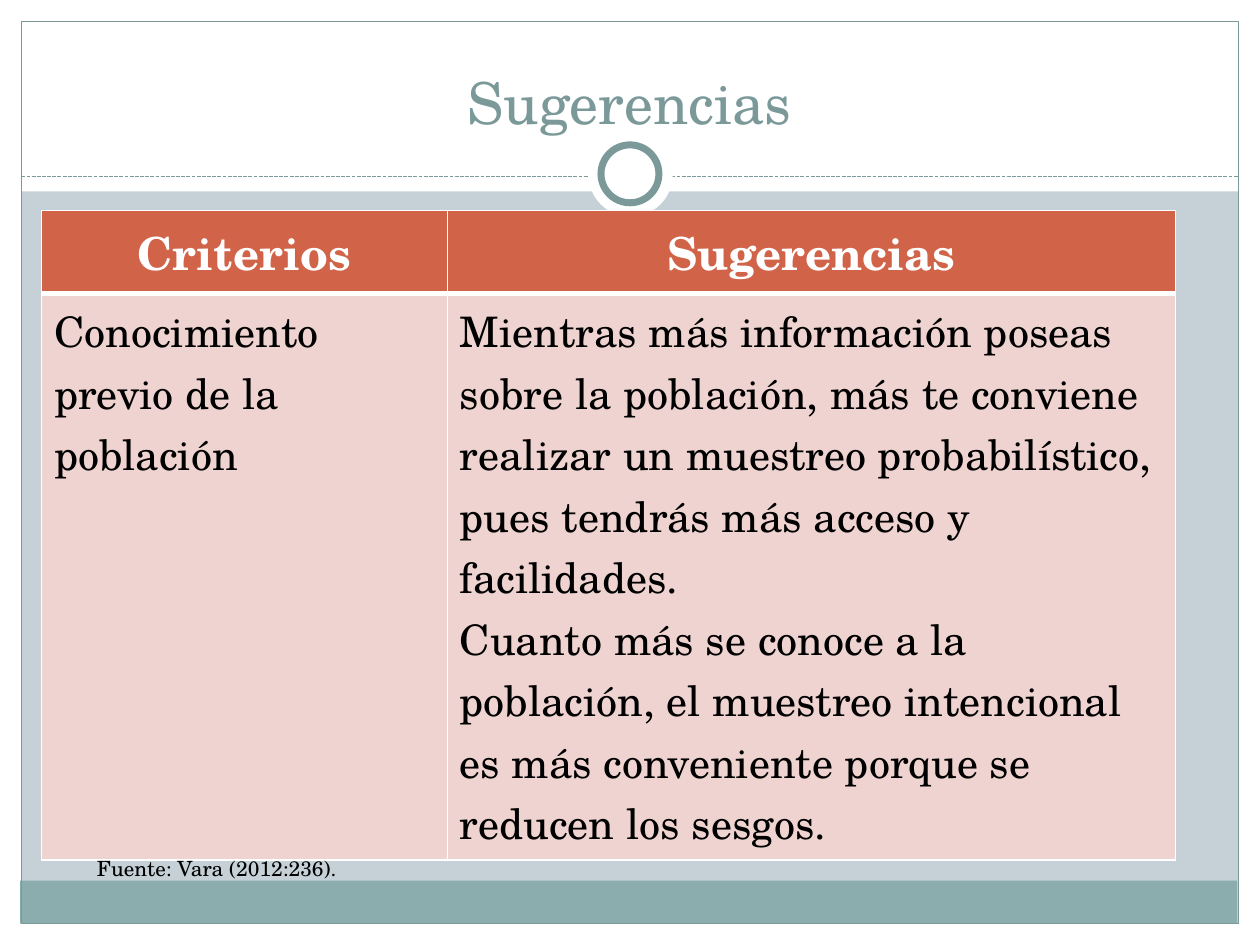
from lxml.etree import SubElement as Sub
from pptx import Presentation
from pptx.dml.color import RGBColor as Rgb
from pptx.enum.dml import MSO_LINE as Dash
from pptx.enum.shapes import MSO_CONNECTOR as Conn, MSO_SHAPE as Form
from pptx.enum.text import MSO_ANCHOR as Anchor, MSO_AUTO_SIZE as Fit, PP_ALIGN as Align
from pptx.oxml.ns import qn
from pptx.util import Inches, Pt

HUES = {"white": "FFFFFF", "black": "000000", "back": "C5D1D7", "teal": "7C999A",
        "band": "8CADAE", "head": "D16349", "body": "EED3D0"}
FONT = "TeX Gyre Schola"


def hue(name):
    return Rgb.from_string(HUES[name])


class Deck:
    """Holds the style and the current slide, and draws each kind of element."""

    def __init__(self):
        self.file = Presentation()
        self.file.slide_width, self.file.slide_height = Inches(10), Inches(7.5)
        self.slide = self.file.slides.add_slide(self.file.slide_layouts[5])
        self.items = self.slide.shapes
        fill = self.slide.background.fill
        fill.solid()
        fill.fore_color.rgb = hue("back")

    def text(self, frame, texts, size, color, bold=False, align=Align.LEFT):
        for i, words in enumerate(texts):
            para = frame.add_paragraph() if i else frame.paragraphs[0]
            para.alignment = align
            run = para.add_run()
            run.text = words
            font = run.font
            font.name, font.size, font.bold = FONT, Pt(size), bold
            font.color.rgb = hue(color)

    def shape(self, form, box, fill=None, line=None, width=0.75):
        item = self.items.add_shape(form, *map(Inches, box))
        item.shadow.inherit = False
        if fill:
            item.fill.solid()
            item.fill.fore_color.rgb = hue(fill)
        else:
            item.fill.background()
        if line:
            item.line.color.rgb = hue(line)
            item.line.width = Pt(width)
        else:
            item.line.fill.background()

    def rule(self, left, right, top):
        item = self.items.add_connector(Conn.STRAIGHT, *map(Inches, (left, top, right, top)))
        item.line.color.rgb = hue("teal")
        item.line.width = Pt(0.75)
        item.line.dash_style = Dash.SQUARE_DOT
        Sub(item._element.spPr, qn("a:effectLst"))

    def title(self, words, box):
        item = self.items.title
        item.left, item.top, item.width, item.height = map(Inches, box)
        frame = item.text_frame
        frame.word_wrap, frame.auto_size = True, Fit.NONE
        frame.vertical_anchor, frame.margin_bottom = Anchor.BOTTOM, 0
        self.text(frame, [words], 33, "teal", align=Align.CENTER)
        self.items._spTree.append(item._element)

    def note(self, words, box):
        frame = self.items.add_textbox(*map(Inches, box)).text_frame
        frame.word_wrap, frame.auto_size = True, Fit.SHAPE_TO_FIT_TEXT
        self.text(frame, [words], 12, "black")

    def edge(self, cell, widths):
        props = cell._tc.get_or_add_tcPr()
        for side, width in zip("LRTB", widths):
            line = Sub(props, qn(f"a:ln{side}"), w=str(Pt(width)))
            Sub(Sub(line, qn("a:solidFill")), qn("a:srgbClr"), val=HUES["white"])

    def table(self, rows, place, cols, highs):
        box = (*place, sum(cols), sum(highs))
        grid = self.items.add_table(len(rows), len(cols), *map(Inches, box)).table
        grid.horz_banding = False
        for col, width in zip(grid.columns, cols):
            col.width = Inches(width)
        for r, (row, high) in enumerate(zip(rows, highs)):
            grid.rows[r].height = Inches(high)
            for c, texts in enumerate(row):
                cell = grid.cell(r, c)
                self.edge(cell, (1, 1, 3, 1) if r else (1, 1, 1, 3))
                cell.fill.solid()
                cell.fill.fore_color.rgb = hue("body" if r else "head")
                if r:
                    self.text(cell.text_frame, texts, 24, "black")
                else:
                    cell.vertical_anchor = Anchor.MIDDLE
                    self.text(cell.text_frame, texts, 26, "white", True, Align.CENTER)


def main():
    deck = Deck()
    for box in ((0, 7.33, 10, 0.17), (0, 0, 10, 1.52), (0, 0, 0.17, 7.5), (9.83, 0, 0.17, 7.5)):
        deck.shape(Form.RECTANGLE, box, "white")
    deck.shape(Form.RECTANGLE, (0.16, 6.99, 9.66, 0.34), "band")
    deck.shape(Form.RECTANGLE, (0.17, 0.17, 9.66, 7.16), line="teal")
    deck.rule(0.17, 9.83, 1.4)
    deck.shape(Form.OVAL, (4.67, 1.05, 0.67, 0.67), "white")
    deck.shape(Form.OVAL, (4.77, 1.15, 0.46, 0.46), "white", "teal", 4)
    deck.title("Sugerencias", (0.33, 0.25, 9.33, 0.83))
    rows = [
        [["Criterios"], ["Sugerencias"]],
        [["Conocimiento previo de la población"],
         ["Mientras más información poseas sobre la población, más te conviene realizar "
          "un muestreo probabilístico, pues tendrás más acceso y facilidades.",
          "Cuanto más se conoce a la población, el muestreo intencional es más conveniente "
          "porque se reducen los sesgos."]],
    ]
    deck.table(rows, (0.33, 1.67), (3.22, 5.78), (0.65, 4.49))
    deck.note("Fuente: Vara (2012:236).", (0.67, 6.74, 3.07, 0.5))
    deck.file.save("out.pptx")


if __name__ == "__main__":
    main()
